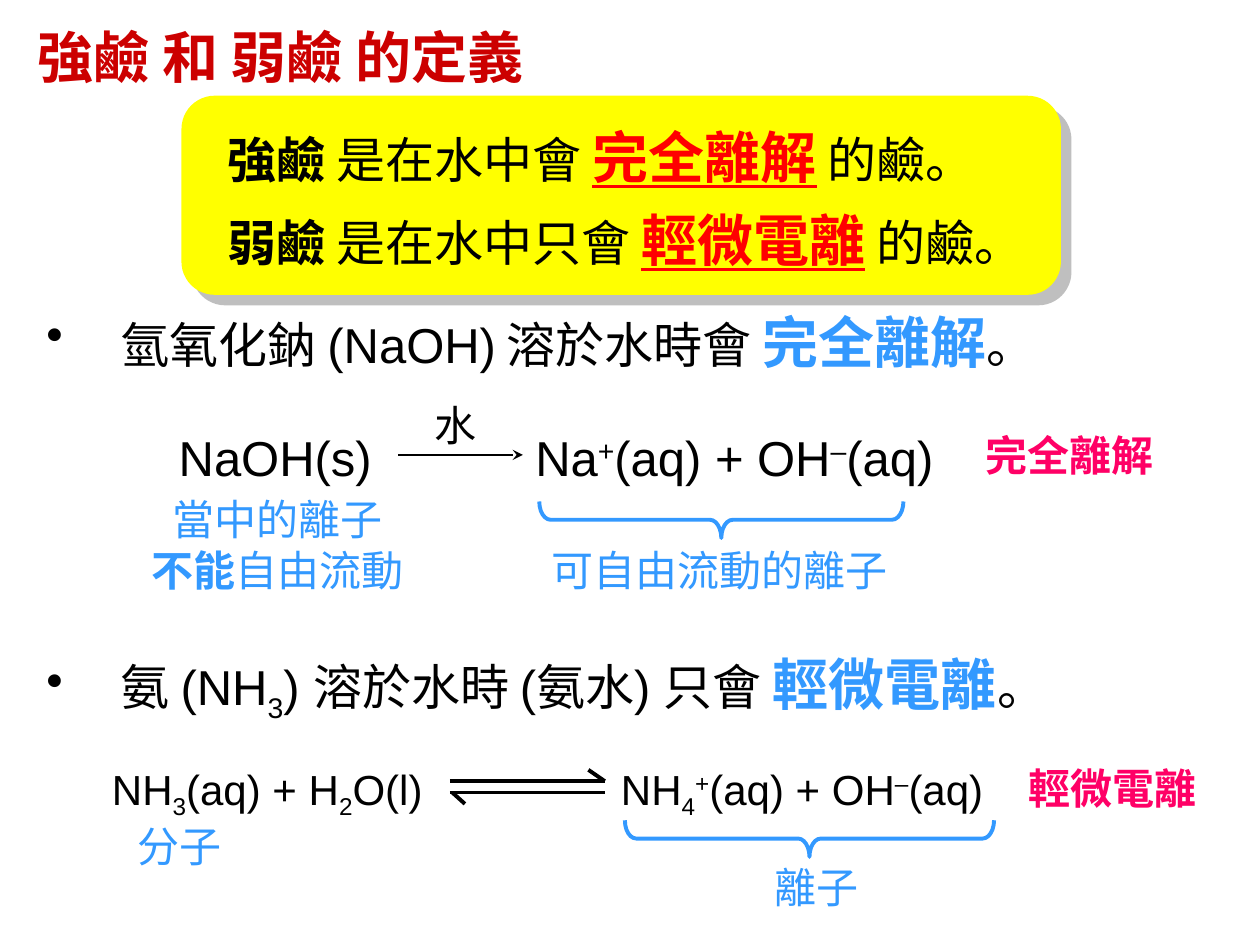
"""Build a slide that defines strong and weak alkalis."""
import pptx
import pptx.dml.color
import pptx.enum.shapes
import pptx.enum.text
import pptx.oxml
import pptx.oxml.ns
import pptx.util

Inches = pptx.util.Inches
Pt = pptx.util.Pt
Shape = pptx.enum.shapes.MSO_SHAPE

BLACK, BLUE, PINK = "000000", "3399FF", "FF0066"
BODY = {"size": Pt(28), "name": "Arial", "color": BLACK}
SMALL = {**BODY, "size": Pt(24)}
NOTE = {**SMALL, "color": BLUE}
TAG = {**SMALL, "color": PINK, "bold": True}
KEY = {"size": Pt(32), "color": BLUE, "bold": True}
HAN = {"name": "Calibri"}
SUB, SUP = {"base": -25}, {"base": 30}


def paint(hue):
    """Turn a hex string into a colour."""
    return pptx.dml.color.RGBColor.from_string(hue)


def write(para, base, runs):
    """Add runs, each a string or a pair of string and changes to the base."""
    for item in runs:
        words, change = (item, {}) if isinstance(item, str) else item
        style = {**base, **change}
        run = para.add_run()
        run.text = words
        run.font.color.rgb = paint(style.pop("color"))
        shift = style.pop("base", 0)
        if shift:
            run._r.get_or_add_rPr().set("baseline", str(shift * 1000))
        for key, value in style.items():
            setattr(run.font, key, value)


def label(slide, x, y, wide, high, base, *lines, mid=False):
    """Place a text box with one paragraph for each list of runs."""
    box = slide.shapes.add_textbox(*map(Inches, (x, y, wide, high)))
    frame = box.text_frame
    form = {"word_wrap": True, "auto_size": pptx.enum.text.MSO_AUTO_SIZE.SHAPE_TO_FIT_TEXT}
    for key, value in form.items():
        setattr(frame, key, value)
    for num, runs in enumerate(lines):
        para = frame.add_paragraph() if num else frame.paragraphs[0]
        if mid:
            para.alignment = pptx.enum.text.PP_ALIGN.CENTER
        write(para, base, runs)
    return box


def bullet(slide, x, y, wide, base, runs):
    """Place a bulleted line with a hanging indent."""
    box = label(slide, x, y, wide, 0.64, base, runs)
    props = box.text_frame.paragraphs[0]._p.get_or_add_pPr()
    for key, value in {"marL": 0.59, "indent": -0.59}.items():
        props.set(key, str(Inches(value)))
    mark = pptx.oxml.parse_xml(f'<a:buChar {pptx.oxml.ns.nsdecls("a")} char="•"/>')
    props.append(mark)


def effect(shape, inner=""):
    """Give a shape an effect list, empty unless content is passed."""
    space = pptx.oxml.ns.nsdecls("a")
    xml = f"<a:effectLst {space}>{inner}</a:effectLst>"
    shape._element.spPr.append(pptx.oxml.parse_xml(xml))


def line(slide, x, y, far, low, width=2.25, head=False):
    """Draw a black line, with an arrowhead at its end if asked."""
    kind = pptx.enum.shapes.MSO_CONNECTOR.STRAIGHT
    rule = slide.shapes.add_connector(kind, *map(Inches, (x, y, far, low)))
    rule.line.color.rgb = paint(BLACK)
    rule.line.width = Pt(width)
    if head:
        tip = f'<a:tailEnd {pptx.oxml.ns.nsdecls("a")} type="stealth"/>'
        rule.line._get_or_add_ln().append(pptx.oxml.parse_xml(tip))
    effect(rule)


def brace(slide, x, y, wide, high=0.29):
    """Draw a brace that points down from the given flat box."""
    left, top = x + (wide - high) / 2, y + (high - wide) / 2
    shape = slide.shapes.add_shape(Shape.LEFT_BRACE, *map(Inches, (left, top, high, wide)))
    shape.rotation = 270
    shape.adjustments[0] = 0.31
    shape.fill.background()
    shape.line.color.rgb = paint(BLUE)
    shape.line.width = Pt(2.25)
    shape.shadow.inherit = False


def panel(slide, x, y, wide, high):
    """Draw the yellow panel with both definitions."""
    card = slide.shapes.add_shape(Shape.ROUNDED_RECTANGLE, *map(Inches, (x, y, wide, high)))
    card.fill.solid()
    card.fill.fore_color.rgb = paint("FFFF00")
    card.line.fill.background()
    effect(card, f'<a:outerShdw dist="{Pt(8.5)}" dir="2700000" algn="ctr" rotWithShape="0">'
                 '<a:srgbClr val="808080"><a:alpha val="50000"/></a:srgbClr></a:outerShdw>')
    bold = {"bold": True}
    rows = (("強", "是在水中會 ", "完全離解"), ("弱", "是在水中只會 ", "輕微電離"))
    for num, (grade, verb, term) in enumerate(rows):
        runs = [(grade, bold), ("鹼 ", {**HAN, **bold}), (verb, HAN),
                (term, {**HAN, **KEY, "color": "FF0000", "underline": True}),
                (" 的鹼。", HAN)]
        label(slide, x + 0.27, y + 0.16 + 0.66 * num, wide, 0.64, BODY, runs)


def strong(slide, x, y, wide):
    """Place the strong alkali line and its equation."""
    bullet(slide, x, y, wide, {**BODY, **HAN},
           ["氫氧化鈉 ", ("(NaOH)", {"name": "Arial"}), " 溶於水時會 ", ("完全離解", KEY), "。"])
    label(slide, x + 1.05, y + 0.95, 1.8, 0.57, BODY, ["NaOH(s)"])
    line(slide, x + 2.89, y + 1.22, x + 3.88, y + 1.22, 1.5, True)
    label(slide, x + 3.08, y + 0.73, 0.66, 0.5, {**SMALL, **HAN}, ["水"])
    label(slide, x + 3.88, y + 0.95, 3.48, 0.57, BODY,
          ["Na", ("+", SUP), "(aq) + OH", ("–", SUP), "(aq)"])
    label(slide, x + 7.36, y + 0.97, 1.71, 0.5, TAG, ["完全離解"], mid=True)
    label(slide, x + 0.64, y + 1.48, 2.58, 0.9, {**NOTE, **HAN},
          ["當中的離子"], [("不能", {"bold": True}), "自由流動"], mid=True)
    brace(slide, x + 4.01, y + 1.59, 2.89)
    label(slide, x + 4.01, y + 1.88, 2.96, 0.5, {**NOTE, **HAN}, ["可自由流動的離子"])


def weak(slide, x, y, wide):
    """Place the weak alkali line and its equation."""
    bullet(slide, x, y, wide, BODY,
           ["氨 (NH", ("3", SUB), ") 溶於水時 (氨水) 只會 ", ("輕微電離", KEY), "。"])
    label(slide, x + 0.52, y + 0.9, 2.75, 0.5, SMALL,
          ["NH", ("3", SUB), "(aq) + H", ("2", SUB), "O(l)"])
    label(slide, x + 4.56, y + 0.9, 3.12, 0.5, SMALL,
          ["NH", ("4", SUB), ("+", SUP), "(aq) + OH", ("–", SUP), "(aq)"])
    label(slide, x + 7.69, y + 0.89, 1.74, 0.5, TAG, ["輕微電離"], mid=True)
    label(slide, x + 0.72, y + 1.35, 0.92, 0.5, NOTE, ["分子"])
    label(slide, x + 5.78, y + 1.68, 0.96, 0.5, NOTE, ["離子"])
    brace(slide, x + 4.69, y + 1.4, 2.93)
    for left, top, far, low in ((3.3, 1.09, 4.53, 1.09), (3.3, 1.18, 4.53, 1.18),
                                (3.32, 1.18, 3.42, 1.27), (4.4, 1, 4.53, 1.09)):
        line(slide, x + left, y + top, x + far, y + low)


def main():
    """Build and save the deck."""
    deck = pptx.Presentation()
    for key, value in {"slide_width": 10, "slide_height": 7.5}.items():
        setattr(deck, key, Inches(value))
    slide = deck.slides.add_slide(deck.slide_layouts[6])
    label(slide, 0.2, 0.13, 4.17, 0.64, {**KEY, **HAN, "color": "CC0000"},
          ["強鹼 和 弱鹼 的定義"])
    strong(slide, 0.27, 2.39, 9.53)
    weak(slide, 0.27, 5.11, 9.14)
    panel(slide, 1.44, 0.76, 6.98, 1.58)
    deck.save("out.pptx")


if __name__ == "__main__":
    main()
